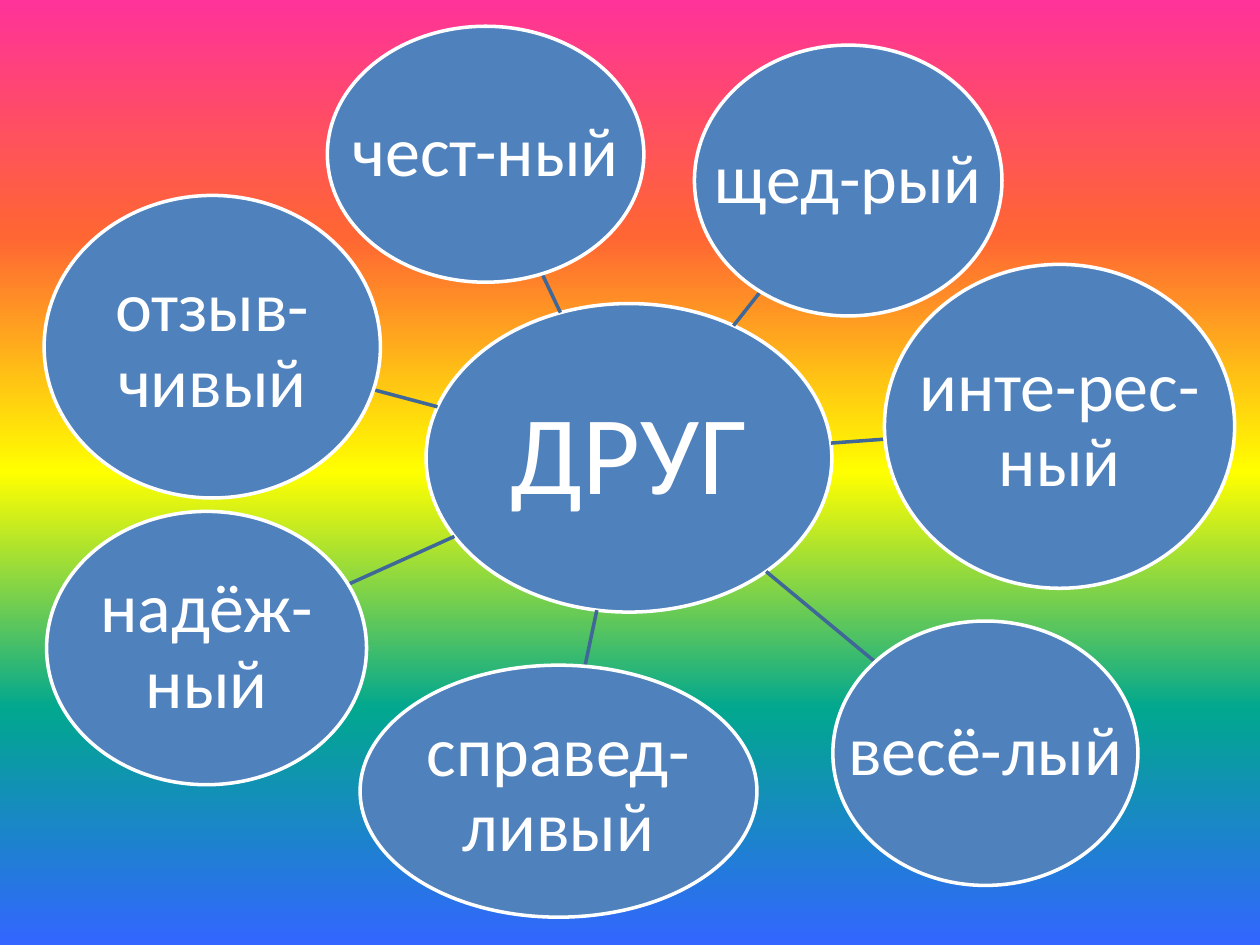
from copy import deepcopy
from math import hypot

from pptx import Presentation
from pptx.dml.color import RGBColor
from pptx.enum.shapes import MSO_CONNECTOR, MSO_SHAPE
from pptx.enum.text import MSO_ANCHOR, PP_ALIGN
from pptx.oxml.ns import qn
from pptx.oxml.xmlchemy import OxmlElement
from pptx.util import Cm, Pt

COLORS = {"bubble": "4F81BD", "outline": "FFFFFF", "text": "FFFFFF", "spoke": "3F6797"}
RAINBOW = ["FF3399", "FF6633", "FFFF00", "01A78F", "3366FF"]

# Word, left, top, width, height in cm
HUB = ("ДРУГ", 8.59, 6.12, 8.18, 6.22)
QUALITIES = [
    ("чест-ный", 6.6, 0.53, 6.38, 5.16),
    ("щед-рый", 14, 0.91, 6.2, 5.46),
    ("инте-рес-ный", 17.83, 5.33, 7.06, 6.53),
    ("весё-лый", 16.79, 12.52, 6.15, 5.33),
    ("справед-ливый", 7.26, 13.41, 8, 5.08),
    ("надёж-ный", 0.94, 10.31, 6.45, 5.51),
    ("отзыв-чивый", 0.89, 3.94, 6.78, 6.1),
]


def rim_point(bubble, other):
    """Point on the bubble's rim that faces the centre of the other bubble."""
    _, left, top, width, height = bubble
    x, y = left + width / 2, top + height / 2
    dx = other[1] + other[3] / 2 - x
    dy = other[2] + other[4] / 2 - y
    scale = 1 / hypot(dx / (width / 2), dy / (height / 2))
    return Cm(x + dx * scale), Cm(y + dy * scale)


def add_bubble(slide, bubble, size, inset):
    word, *place = bubble
    box = [Cm(length) for length in place]
    oval = slide.shapes.add_shape(MSO_SHAPE.OVAL, *box)
    oval.shadow.inherit = False
    oval.fill.solid()
    oval.fill.fore_color.rgb = RGBColor.from_string(COLORS["bubble"])
    oval.line.color.rgb = RGBColor.from_string(COLORS["outline"])
    oval.line.width = Pt(2)

    # The word spans the full width of the oval, so it has its own box
    frame = slide.shapes.add_textbox(*box).text_frame
    frame.word_wrap = True
    frame.vertical_anchor = MSO_ANCHOR.MIDDLE
    frame.margin_left = frame.margin_right = Cm(inset)
    frame.margin_top = frame.margin_bottom = Cm(inset)
    frame.text = word
    line = frame.paragraphs[0]
    line.alignment = PP_ALIGN.CENTER
    line.line_spacing = 0.9
    font = line.runs[0].font
    font.name = "Calibri"
    font.size = Pt(size)
    font.color.rgb = RGBColor.from_string(COLORS["text"])


deck = Presentation()
deck.slide_width, deck.slide_height = Cm(25.4), Cm(19.05)
slide = deck.slides.add_slide(deck.slide_layouts[6])

# Rainbow background, top to bottom
sky = slide.background.fill
sky.gradient()
sky.gradient_angle = 270
stops = slide.background._cSld.find(".//" + qn("a:gsLst"))
blank_stop = deepcopy(stops[0])
for old_stop in list(stops):
    stops.remove(old_stop)
for index, color in enumerate(RAINBOW):
    stop = deepcopy(blank_stop)
    stop.set("pos", str(index * 25000))
    for old_color in list(stop):
        stop.remove(old_color)
    rgb = OxmlElement("a:srgbClr")
    rgb.set("val", color)
    stop.append(rgb)
    stops.append(stop)

# Central word
add_bubble(slide, HUB, 64, 0.1)

# Qualities, each on a spoke from the centre
for quality in QUALITIES:
    spoke = slide.shapes.add_connector(
        MSO_CONNECTOR.STRAIGHT, *rim_point(HUB, quality), *rim_point(quality, HUB))
    spoke.line.color.rgb = RGBColor.from_string(COLORS["spoke"])
    spoke.line.width = Pt(2)
    spoke._element.spPr.append(OxmlElement("a:effectLst"))
    add_bubble(slide, quality, 40, 0.08)

deck.save("out.pptx")
